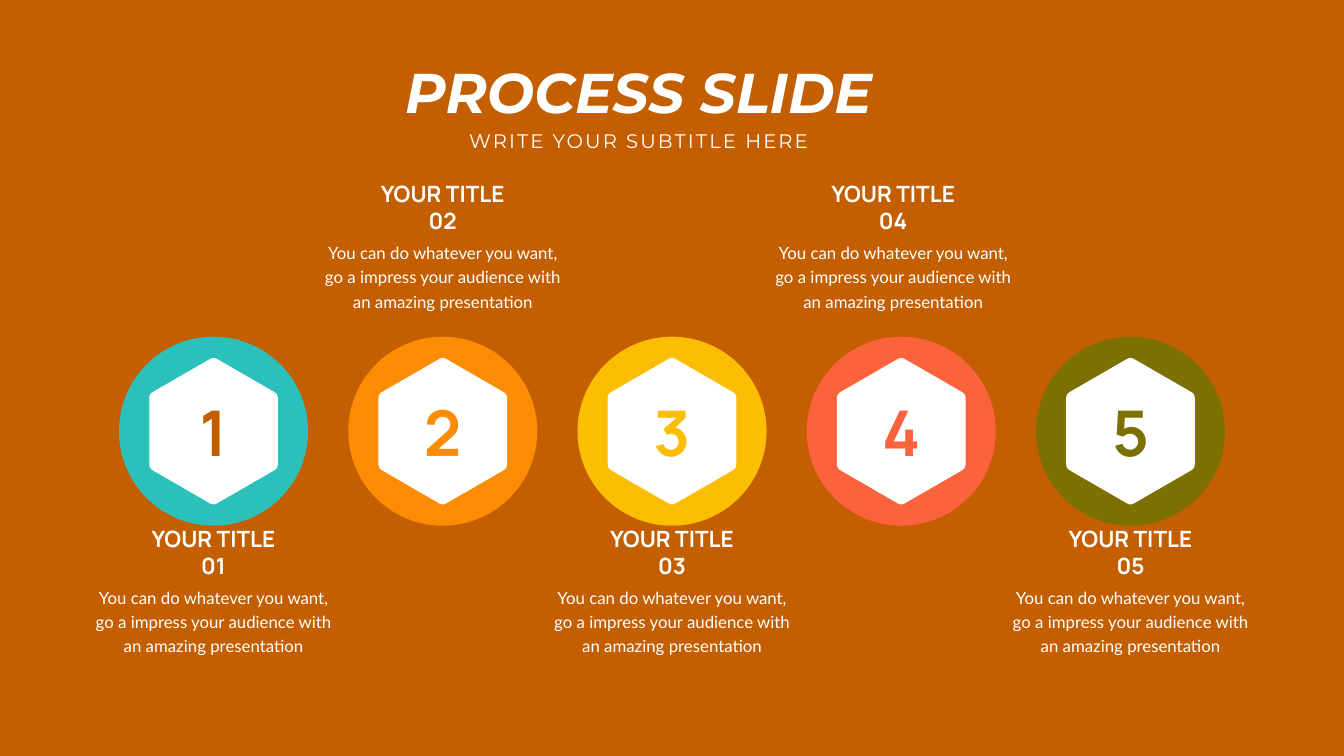
from math import cos, pi, sin

from pptx import Presentation
from pptx.dml.color import RGBColor
from pptx.enum.shapes import MSO_SHAPE as Preset
from pptx.enum.text import MSO_ANCHOR as Anchor, MSO_AUTO_SIZE as AutoSize, PP_ALIGN as Align
from pptx.util import Pt

WHITE = RGBColor(0xFF, 0xFF, 0xFF)
RUST = RGBColor(0xC3, 0x5F, 0x00)
TEAL = RGBColor(0x2C, 0xC0, 0xBA)
ORANGE = RGBColor(0xFB, 0x8C, 0x03)
YELLOW = RGBColor(0xFC, 0xBE, 0x02)
CORAL = RGBColor(0xFA, 0x63, 0x3C)
OLIVE = RGBColor(0x7C, 0x71, 0x00)

PAGE_WIDTH, PAGE_HEIGHT = 1919.52, 1080
STEP_PITCH = 327.4
BADGE_SIZE, BADGE_TOP = 270, 481
CAPTION_WIDTH, CAPTION_HEIGHT = 370, 155.5
UPPER_TOP, LOWER_TOP = 291.8, 784
STEPS = [
    (TEAL, RUST, LOWER_TOP, 0),
    (ORANGE, ORANGE, UPPER_TOP, 0),
    (YELLOW, YELLOW, LOWER_TOP, 0),
    (CORAL, CORAL, UPPER_TOP, -11.5),
    (OLIVE, OLIVE, LOWER_TOP, 0),
]
BODY = "You can do whatever you want, go a impress your audience with an amazing presentation"


def write(shape, text, family, size, color=WHITE, bold=False, italic=False,
          anchor=Anchor.TOP, wrap=True):
    """Fill a shape with one centred paragraph and return the paragraph."""
    frame = shape.text_frame
    frame.auto_size = AutoSize.NONE
    frame.word_wrap = wrap
    frame.vertical_anchor = anchor
    para = frame.paragraphs[0]
    para.text = text
    para.alignment = Align.CENTER
    font = para.font
    font.name, font.size = family, Pt(size)
    font.bold, font.italic = bold, italic
    font.color.rgb = color
    return para


def add_text(page, box, text, family, size, **style):
    """Add a text box in the given box and return its paragraph."""
    shape = page.shapes.add_textbox(*map(Pt, box))
    return write(shape, text, family, size, **style)


def paint(shape, color):
    """Give a shape a plain fill with no line or shadow."""
    shape.fill.solid()
    shape.fill.fore_color.rgb = color
    shape.line.fill.background()
    shape.shadow.inherit = False


def rounded_hexagon(center_x, center_y, radius, cut=0.055, pieces=6):
    """Return the outline points of an upright hexagon with curved corners."""
    corners = [(center_x + radius * sin(k * pi / 3), center_y - radius * cos(k * pi / 3))
               for k in range(6)]
    points = []
    for k, corner in enumerate(corners):
        before, after = corners[k - 1], corners[(k + 1) % 6]
        for t in (piece / pieces for piece in range(pieces + 1)):
            back, ahead = cut * (1 - t) ** 2, cut * t ** 2
            points.append(tuple(Pt(c + back * (b - c) + ahead * (a - c))
                                for c, b, a in zip(corner, before, after)))
    return points


def add_heading(page, box):
    """Place the slide title and the subtitle in the given box."""
    left, top, width, height = box
    title = page.shapes.title
    title.left, title.top, title.width, title.height = map(Pt, (left, top, width, 104.4))
    write(title, "PROCESS SLIDE", "Montserrat", 80, bold=True, italic=True, wrap=False)
    subtitle_box = (left + 94.5, top + height - 41, width - 189, 41)
    subtitle = add_text(page, subtitle_box, "WRITE YOUR SUBTITLE HERE",
                        "Montserrat", 28, wrap=False)
    subtitle.runs[0].font._element.set("spc", "300")


def add_badge(page, box, number, circle_color, number_color):
    """Place a numbered hexagon on a circle that fills the given box."""
    left, top, width, height = box
    paint(page.shapes.add_shape(Preset.OVAL, *map(Pt, box)), circle_color)
    center_x, center_y = left + width / 2, top + height / 2
    points = rounded_hexagon(center_x, center_y, 106)
    builder = page.shapes.build_freeform(*points[0])
    builder.add_line_segments(points[1:], close=True)
    paint(builder.convert_to_shape(), WHITE)
    add_text(page, (center_x - 36, center_y - 58.5, 72, 117), str(number), "Manrope", 90,
             color=number_color, bold=True, anchor=Anchor.MIDDLE, wrap=False)


def add_caption(page, box, number):
    """Place a step title above its description in the given box."""
    left, top, width, height = box
    title_width, title_height = 209, 46
    title_box = (left + (width - title_width) / 2, top, title_width, title_height)
    add_text(page, title_box, f"YOUR TITLE {number:02}", "Manrope", 32,
             bold=True, anchor=Anchor.BOTTOM)
    body_box = (left, top + title_height, width, height - title_height)
    add_text(page, body_box, BODY, "Lato", 24).line_spacing = 1.2


def main():
    """Build and save the process slide."""
    deck = Presentation()
    deck.slide_width, deck.slide_height = Pt(PAGE_WIDTH), Pt(PAGE_HEIGHT)
    page = deck.slides.add_slide(deck.slide_layouts[5])
    page.background.fill.solid()
    page.background.fill.fore_color.rgb = RUST
    add_heading(page, (565.2, 78.5, 694, 143.5))
    for index, (circle_color, number_color, caption_top, shift) in enumerate(STEPS):
        number = index + 1
        center = PAGE_WIDTH / 2 + (index - 2) * STEP_PITCH
        badge_box = (center - BADGE_SIZE / 2, BADGE_TOP, BADGE_SIZE, BADGE_SIZE)
        add_badge(page, badge_box, number, circle_color, number_color)
        caption_left = center + shift - CAPTION_WIDTH / 2
        add_caption(page, (caption_left, caption_top, CAPTION_WIDTH, CAPTION_HEIGHT), number)
    deck.save("out.pptx")


if __name__ == "__main__":
    main()
